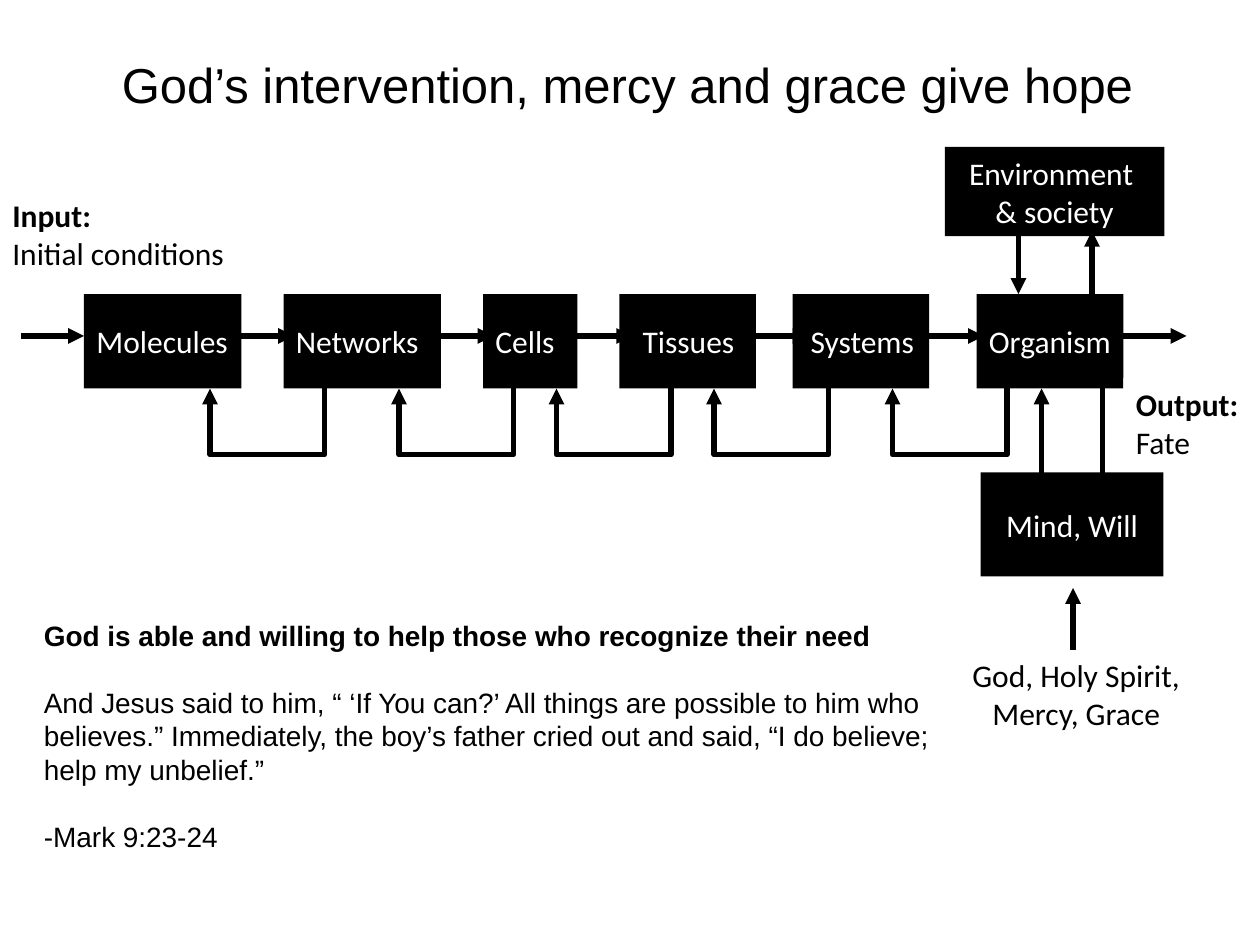
from lxml import etree
from pptx import Presentation, util as u
from pptx.dml.color import RGBColor
from pptx.enum import shapes, text
from pptx.oxml.ns import qn

COLORS = {"ink": "000000", "paper": "FFFFFF"}
COLUMNS, ROWS = 120, 90
CELL = u.Inches(10) // COLUMNS

STAGES = [
    ("Molecules", 8, 15, 1.2),
    ("Networks", 27, 15, 1.2),
    ("Cells", 46, 9, 1.2),
    ("Tissues", 59, 13, 2.2),
    ("Systems", 75.5, 13, 1.7),
    ("Organism", 93, 14, 1.2),
]
FORWARD_STARTS = [2, 22, 41, 54.2, 71, 87.7, 107]
FEEDBACK_LEFTS = [20, 38, 53, 68, 85]


def cells(*values):
    """Convert grid cells to lengths."""
    return [u.Emu(round(value * CELL)) for value in values]


def color(name):
    """Return a palette colour."""
    return RGBColor.from_string(COLORS[name])


def write(shape, lines, size, font, ink, align, bold_first=False):
    """Write one paragraph per line and format the runs."""
    frame = shape.text_frame
    frame.word_wrap = True
    frame.text = "\n".join(lines)
    for index, paragraph in enumerate(frame.paragraphs):
        paragraph.alignment = align
        for run in paragraph.runs:
            run.font.size, run.font.name = u.Pt(size), font
            run.font.color.rgb = color(ink)
            run.font.bold = bold_first and index == 0
    return frame


def add_box(slide, box, lines, fill="ink", ink="paper",
            align=text.PP_ALIGN.CENTER, bold_first=False):
    """Add a filled rectangle holding its label."""
    shape = slide.shapes.add_shape(shapes.MSO_SHAPE.RECTANGLE, *cells(*box))
    shape.shadow.inherit = False
    shape.fill.solid()
    shape.fill.fore_color.rgb = color(fill)
    shape.line.fill.background()
    frame = write(shape, lines, 18, "Calibri", ink, align, bold_first)
    frame.vertical_anchor = text.MSO_ANCHOR.MIDDLE
    return frame


def add_arrow(slide, start, end, kind=shapes.MSO_CONNECTOR.STRAIGHT):
    """Add a thick connector with a triangular head."""
    arrow = slide.shapes.add_connector(kind, *cells(*start, *end))
    arrow.line.color.rgb = color("ink")
    arrow.line.width = u.Pt(3)
    etree.SubElement(arrow.line._get_or_add_ln(), qn("a:tailEnd"), type="triangle")
    etree.SubElement(arrow._element.spPr, qn("a:effectLst"))
    return arrow


def add_feedback(slide, left, top, width, height, drop):
    """Add an elbow that leaves right, drops and returns upward at left."""
    arrow = add_arrow(slide, (left, top + height), (left + width, top),
                      shapes.MSO_CONNECTOR.ELBOW)
    properties = arrow._element.spPr
    properties.find(qn("a:xfrm")).set("rot", "10800000")
    geometry = properties.find(qn("a:prstGeom"))
    geometry.set("prst", "bentConnector4")
    guides = geometry.find(qn("a:avLst"))
    for name, share in (("adj1", -0.212), ("adj2", drop / height)):
        etree.SubElement(guides, qn("a:gd"), name=name,
                         fmla=f"val {round(share * 100000)}")


def add_title(slide, box):
    """Place and format the title."""
    title = slide.shapes.title
    title.left, title.top, title.width, title.height = cells(*box)
    frame = write(title, ["God’s intervention, mercy and grace give hope"],
                  28, "Arial", "ink", text.PP_ALIGN.CENTER)
    frame.vertical_anchor = text.MSO_ANCHOR.MIDDLE


def add_chain(slide, left, top, height):
    """Add the stages with their forward and feedback arrows."""
    for start in FEEDBACK_LEFTS:
        add_feedback(slide, left + start, top + 6.5, 9, 2.5, 8.8)
    add_feedback(slide, left + 99.2, top + 6.5, 4.8, 2.5, 13.4)
    for name, start, width, inset in STAGES:
        frame = add_box(slide, (left + start, top, width, height), [name],
                        align=text.PP_ALIGN.LEFT)
        frame.margin_left, frame.margin_right = cells(inset, 0)
    for start in FORWARD_STARTS:
        add_arrow(slide, (left + start, top + 4), (left + start + 6, top + 4))


def add_surroundings(slide, left, top):
    """Add what acts on the organism from above and below."""
    add_arrow(slide, (left + 7, top + 8), (left + 7, top + 14))
    add_box(slide, (left, top, 20.9, 8.5), ["Environment ", "& society"])
    add_arrow(slide, (left + 14, top + 14), (left + 14, top + 8))
    add_box(slide, (left + 3.4, top + 31, 17.4, 9.9), ["Mind, Will"])
    add_arrow(slide, (left + 12.2, top + 47.9), (left + 12.2, top + 42))
    source = slide.shapes.add_textbox(*cells(left - 1, top + 47.9, 27, 8.5))
    write(source, ["God, Holy Spirit, Mercy, Grace"], 18, "Calibri", "ink",
          text.PP_ALIGN.CENTER)


def add_passage(slide, box):
    """Add the heading, the quotation and its reference."""
    passage = slide.shapes.add_textbox(*cells(*box))
    lines = [
        "God is able and willing to help those who recognize their need",
        "And Jesus said to him, “ ‘If You can?’ All things are possible to him who "
        "believes.” Immediately, the boy’s father cried out and said, “I do believe; "
        "help my unbelief.”",
        "-Mark 9:23-24",
    ]
    frame = write(passage, lines, 16, "Arial", "ink", text.PP_ALIGN.LEFT, True)
    for paragraph in frame.paragraphs[1:]:
        paragraph.space_before = u.Pt(19)


def main():
    """Build and save the slide."""
    presentation = Presentation()
    presentation.slide_width, presentation.slide_height = cells(COLUMNS, ROWS)
    slide = presentation.slides.add_slide(presentation.slide_layouts[5])
    add_title(slide, (0, 4.6, 119.5, 6.8))
    add_chain(slide, 0, 28, 9)
    add_surroundings(slide, 90, 14)
    for box, lines in (((0, 18, 23, 8.5), ["Input:", "Initial conditions"]),
                       ((107, 36, 13, 8.5), ["Output:", "Fate"])):
        add_box(slide, box, lines, "paper", "ink", text.PP_ALIGN.LEFT, True)
    add_passage(slide, (3, 58.3, 88, 23.9))
    presentation.save("out.pptx")


if __name__ == "__main__":
    main()
